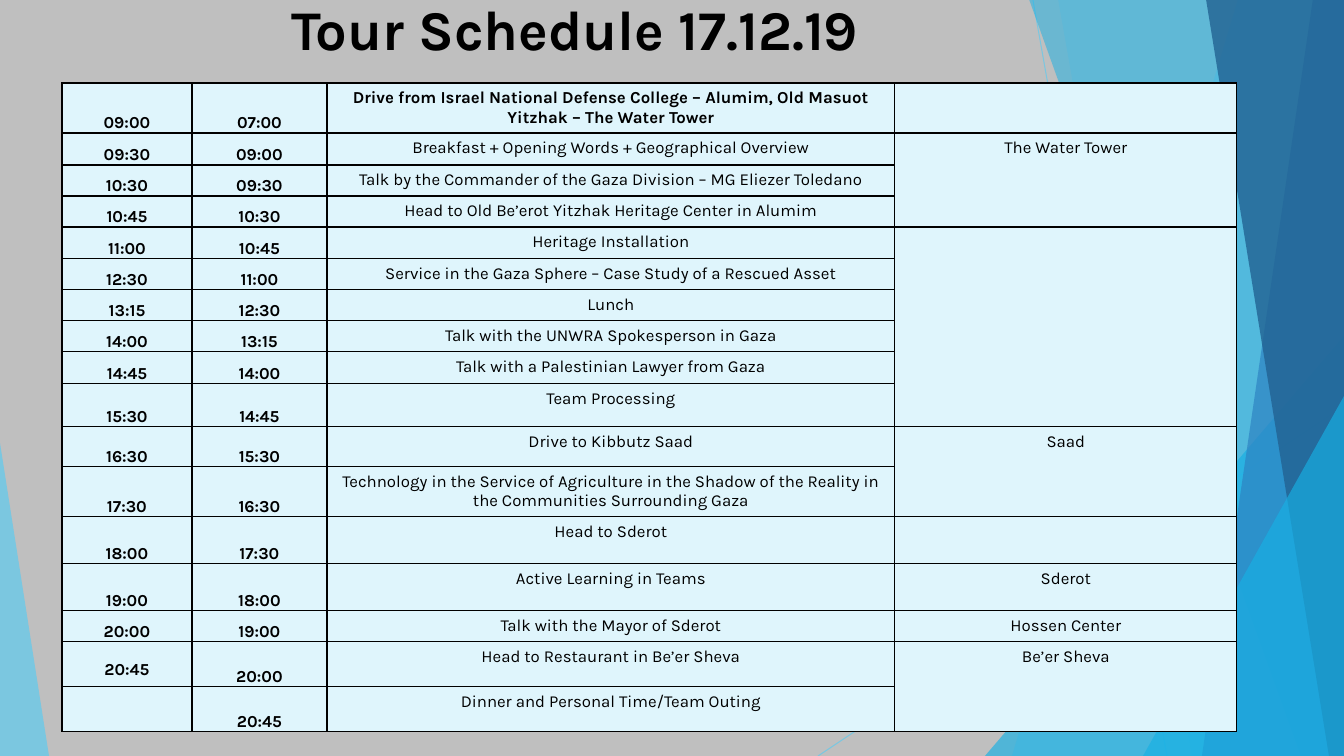
from lxml import etree
from pptx import Presentation
from pptx.dml.color import RGBColor
from pptx.enum.shapes import MSO_CONNECTOR, MSO_SHAPE
from pptx.enum.text import MSO_ANCHOR, MSO_AUTO_SIZE, PP_ALIGN
from pptx.oxml.ns import qn
from pptx.util import Emu, Pt

STRAIGHT = MSO_CONNECTOR.STRAIGHT
TRIANGLE = MSO_SHAPE.ISOSCELES_TRIANGLE
TOP, MIDDLE, BOTTOM = MSO_ANCHOR.TOP, MSO_ANCHOR.MIDDLE, MSO_ANCHOR.BOTTOM
LEFT, CENTER = PP_ALIGN.LEFT, PP_ALIGN.CENTER
NO_AUTOFIT = MSO_AUTO_SIZE.NONE

EMU_PER_PX = 914400 / 100.8
WIDTH, HEIGHT = 1344, 756
TITLE_ONLY = 5
FONT = "Karla"
COLORS = {
    "background": "BFBFBF", "text": "000000", "border": "000000",
    "cell": "DFF5FC", "sky": "5FCBEF", "cyan": "17B0E4",
    "blue": "2E83C3", "navy": "226292",
}

# Table sizes and contents: row height, end, start, activity
COLUMN_WIDTHS = [130, 135, 568, 342]
SCHEDULE = [
    (50, "09:00", "07:00", "Drive from Israel National Defense College – Alumim, "
                           "Old Masuot Yitzhak – The Water Tower"),
    (32, "09:30", "09:00", "Breakfast + Opening Words + Geographical Overview"),
    (31, "10:30", "09:30", "Talk by the Commander of the Gaza Division – MG Eliezer Toledano"),
    (31, "10:45", "10:30", "Head to Old Be’erot Yitzhak Heritage Center in Alumim"),
    (32, "11:00", "10:45", "Heritage Installation"),
    (31, "12:30", "11:00", "Service in the Gaza Sphere – Case Study of a Rescued Asset"),
    (31, "13:15", "12:30", "Lunch"),
    (31, "14:00", "13:15", "Talk with the UNWRA Spokesperson in Gaza"),
    (32, "14:45", "14:00", "Talk with a Palestinian Lawyer from Gaza"),
    (43, "15:30", "14:45", "Team Processing"),
    (40, "16:30", "15:30", "Drive to Kibbutz Saad"),
    (50, "17:30", "16:30", "Technology in the Service of Agriculture in the Shadow of "
                           "the Reality in the Communities Surrounding Gaza"),
    (47, "18:00", "17:30", "Head to Sderot"),
    (47, "19:00", "18:00", "Active Learning in Teams"),
    (31, "20:00", "19:00", "Talk with the Mayor of Sderot"),
    (45, "20:45", "20:00", "Head to Restaurant in Be’er Sheva"),
    (45, "", "20:45", "Dinner and Personal Time/Team Outing"),
]
# Places: first row, last row, name
PLACES = [
    (1, 3, "The Water Tower"), (4, 9, ""), (10, 11, "Saad"),
    (13, 13, "Sderot"), (14, 14, "Hossen Center"), (15, 16, "Be’er Sheva"),
]


def px(value):
    return Emu(round(value * EMU_PER_PX))


def color(name):
    return RGBColor.from_string(COLORS[name])


def set_opacity(shape, percent):
    for element in shape.element.spPr.iter(qn("a:srgbClr")):
        etree.SubElement(element, qn("a:alpha"), val=str(percent * 1000))


def style_facet(shape, fill, opacity):
    shape.shadow.inherit = False
    shape.line.fill.background()
    shape.fill.solid()
    shape.fill.fore_color.rgb = color(fill)
    set_opacity(shape, opacity)


def add_ray(slide, start_x, start_y, end_x, end_y):
    ray = slide.shapes.add_connector(
        STRAIGHT, px(start_x), px(start_y), px(end_x), px(end_y))
    ray.line.color.rgb = color("sky")
    ray.line.width = Pt(0.75)
    set_opacity(ray, 70)
    etree.SubElement(ray.element.spPr, qn("a:effectLst"))


def add_right_facet(slide, top_x, bottom_x, fill, opacity):
    """Fill the area from a slanted edge to the right side of the slide."""
    builder = slide.shapes.build_freeform(top_x, -1, scale=EMU_PER_PX)
    builder.add_line_segments(
        [(WIDTH, -1), (WIDTH, HEIGHT), (bottom_x, HEIGHT)], close=True)
    style_facet(builder.convert_to_shape(), fill, opacity)


def add_corner(slide, left, top, width, apex, fill, opacity):
    """Add a triangle that stands on the bottom edge of the slide."""
    corner = slide.shapes.add_shape(
        TRIANGLE, px(left), px(top), px(width), px(HEIGHT - top))
    corner.adjustments[0] = apex
    style_facet(corner, fill, opacity)


def add_text(paragraph, text, size, bold, alignment, spacing):
    paragraph.alignment = alignment
    paragraph.line_spacing = spacing
    run = paragraph.add_run()
    run.text = text
    run.font.name = FONT
    run.font.size = Pt(size)
    run.font.bold = bold
    run.font.color.rgb = color("text")


def add_title(slide, text):
    title = slide.shapes.title
    title.left, title.top, title.width, title.height = px(281), px(-3), px(694), px(72)
    frame = title.text_frame
    frame.auto_size = NO_AUTOFIT
    frame.vertical_anchor = TOP
    add_text(frame.paragraphs[0], text, 40, True, LEFT, 0.9)


def style_cell(cell):
    properties = cell._tc.get_or_add_tcPr()
    for index, side in enumerate(("a:lnL", "a:lnR", "a:lnT", "a:lnB")):
        border = etree.Element(qn(side), w=str(Pt(1)))
        fill = etree.SubElement(border, qn("a:solidFill"))
        etree.SubElement(fill, qn("a:srgbClr"), val=COLORS["border"])
        properties.insert(index, border)
    cell.fill.solid()
    cell.fill.fore_color.rgb = color("cell")


def fill_time(cell, time, anchor=BOTTOM):
    cell.margin_left = cell.margin_right = cell.margin_top = px(1)
    cell.margin_bottom = 0
    cell.vertical_anchor = anchor
    add_text(cell.text_frame.paragraphs[0], time, 12, True, CENTER, 1.5)


def fill_label(cell, text, bold=False):
    add_text(cell.text_frame.paragraphs[0], text, 12, bold, CENTER, 1.0)


def add_schedule(slide):
    heights = [row[0] for row in SCHEDULE]
    table = slide.shapes.add_table(
        len(SCHEDULE), len(COLUMN_WIDTHS), px(62), px(83),
        px(sum(COLUMN_WIDTHS)), px(sum(heights))).table
    for column, width in zip(table.columns, COLUMN_WIDTHS):
        column.width = px(width)
    for row, height in zip(table.rows, heights):
        row.height = px(height)
    for cell in table.iter_cells():
        style_cell(cell)

    for index, (_, end, start, activity) in enumerate(SCHEDULE):
        if end:
            fill_time(table.cell(index, 0), end, MIDDLE if end == "20:45" else BOTTOM)
        fill_time(table.cell(index, 1), start)
        fill_label(table.cell(index, 2), activity, bold=index == 0)

    for first, last, place in PLACES:
        cell = table.cell(first, 3)
        if last > first:
            cell.merge(table.cell(last, 3))
        if place:
            fill_label(cell, place)


def main():
    presentation = Presentation()
    presentation.slide_width, presentation.slide_height = px(WIDTH), px(HEIGHT)
    slide = presentation.slides.add_slide(presentation.slide_layouts[TITLE_ONLY])
    slide.background.fill.solid()
    slide.background.fill.fore_color.rgb = color("background")

    # Faceted backdrop
    add_ray(slide, 1033, 0, 1167, HEIGHT)
    add_ray(slide, WIDTH, 406, 818, HEIGHT)
    add_right_facet(slide, 1238, 1012, "sky", 36)
    add_right_facet(slide, 1058, 1192, "sky", 20)
    add_corner(slide, 985, 336, 359, 1, "cyan", 66)
    add_right_facet(slide, 1029, 1301, "cyan", 50)
    add_right_facet(slide, 1313, 1202, "blue", 70)
    add_right_facet(slide, 1206, 1329, "navy", 80)
    add_corner(slide, 1143, 396, 201, 1, "cyan", 66)
    add_corner(slide, 0, 443, 49, 0, "sky", 70)

    # Title and timetable
    add_title(slide, "Tour Schedule 17.12.19")
    add_schedule(slide)
    presentation.save("out.pptx")


if __name__ == "__main__":
    main()
